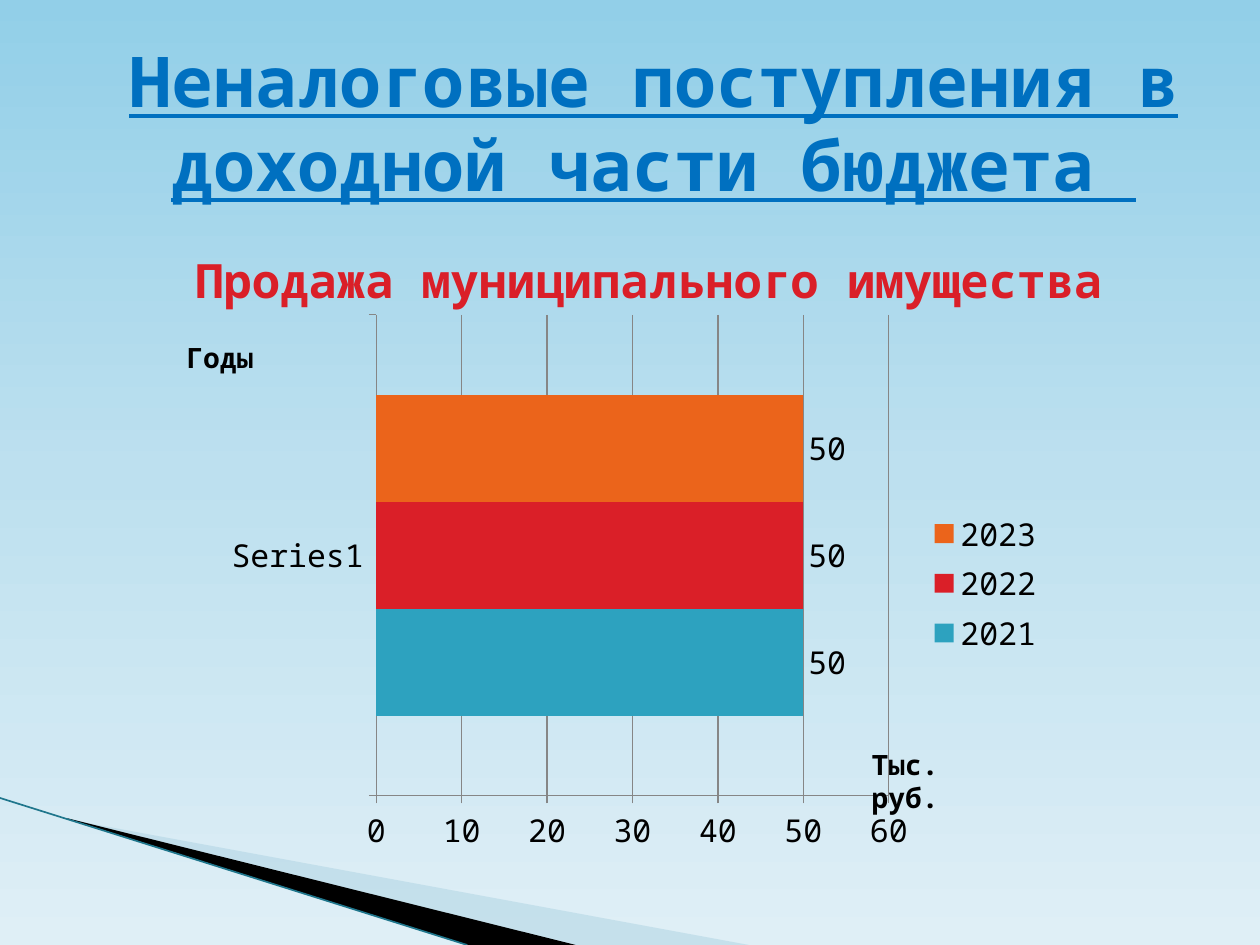
"""Build a slide on non-tax budget income with a bar chart."""
import copy

import lxml.etree
import pptx
import pptx.chart.data
import pptx.dml.color
import pptx.enum.chart
import pptx.enum.dml
import pptx.enum.text
import pptx.oxml
import pptx.oxml.ns
import pptx.util

Pt = pptx.util.Pt
qn = pptx.oxml.ns.qn
FACE = "Noto Sans Mono"
GREY = "868686"


def tint(code):
    """Return the colour for a hex string."""
    return pptx.dml.color.RGBColor.from_string(code)


def assign(item, style):
    """Set each attribute of a format dict on an item."""
    for key, value in style.items():
        setattr(item, key, value)


def style_font(font, size, code="000000", **more):
    """Give a font its face, size, colour and other traits."""
    assign(font, {"name": FACE, "size": Pt(size), **more})
    font.color.rgb = tint(code)


def place(shape, box):
    """Move and size a shape to a box in points."""
    assign(shape, dict(zip(("left", "top", "width", "height"), map(Pt, box))))


def write(shape, text, size, code, indent=0, **more):
    """Fill a shape with one centred bold paragraph."""
    frame = shape.text_frame
    assign(frame, {"word_wrap": True,
                   "auto_size": pptx.enum.text.MSO_AUTO_SIZE.NONE})
    frame.text = text
    para = frame.paragraphs[0]
    props = para._p.get_or_add_pPr()
    props.set("marL", str(Pt(indent)))
    props.set("indent", "0")
    lxml.etree.SubElement(props, qn("a:buNone"))
    assign(para, {"alignment": pptx.enum.text.PP_ALIGN.CENTER,
                  "space_before": Pt(0)})
    style_font(para.runs[0].font, size, code, bold=True, **more)


def paint_back(page, stops):
    """Fill the page with a gradient that runs down."""
    fill = page.background.fill
    fill.gradient()
    fill.gradient_angle = 270
    first = next(page.element.iter(qn("a:gs")))
    first.addnext(copy.deepcopy(first))
    for stop, (spot, code) in zip(fill.gradient_stops, stops):
        stop.color.rgb = tint(code)
        stop.position = spot


def add_wedge(page, points, code, alpha=100):
    """Draw a closed outline with a plain fill."""
    start, *rest = [(Pt(x), Pt(y)) for x, y in points]
    maker = page.shapes.build_freeform(*start, scale=1.0)
    maker.add_line_segments(rest, close=True)
    wedge = maker.convert_to_shape()
    wedge.shadow.inherit = False
    wedge.fill.solid()
    wedge.fill.fore_color.rgb = tint(code)
    wedge.line.fill.background()
    if alpha < 100:
        color = wedge.fill._xPr.find(qn("a:solidFill"))[0]
        lxml.etree.SubElement(color, qn("a:alpha")).set("val", str(alpha * 1000))


def add_corner(page, box):
    """Draw the wedges and thin line of the lower left corner."""
    left, top, width, height = box
    right, base = left + width, top + height
    add_wedge(page, [(left + 40, top + 12.5), (right, base),
                     (right - 100, base), (left + 40, top + 12)], "A0CBDC", 40)
    add_wedge(page, [(left + 38, top + 11.5), (right - 99, base),
                     (right - 160.5, base), (left + 39, top + 12)], "000000")
    line = page.shapes.add_connector(
        1, Pt(left), Pt(top), Pt(right - 161), Pt(base))
    line.line.width = Pt(0.95)
    line.line.color.rgb = tint("1F768C")
    lxml.etree.SubElement(line._element.spPr, qn("a:effectLst"))


def fill_holder(page, index, box, *words, **more):
    """Place a template holder on top and write its text."""
    holder = page.placeholders[index]
    place(holder, box)
    write(holder, *words, **more)
    page.shapes.element.append(holder.element)
    return holder


def add_label(page, box, text):
    """Add a short axis label."""
    label = page.shapes.add_textbox(*map(Pt, box))
    write(label, text, 16, "000000", indent=8.6)


def set_plot(chart, part):
    """Fix the inner plot area as parts of the chart."""
    area = chart._chartSpace.chart.plotArea
    for old in area.findall(qn("c:layout")):
        area.remove(old)
    layout = pptx.oxml.parse_xml(
        "<c:layout %s><c:manualLayout/></c:layout>" % pptx.oxml.ns.nsdecls("c"))
    tags = ("layoutTarget", "xMode", "yMode", "x", "y", "w", "h")
    for tag, value in zip(tags, ("inner", "edge", "edge", *part)):
        lxml.etree.SubElement(layout[0], qn("c:" + tag)).set("val", str(value))
    area.insert(0, layout)


def add_bars(page, box, rows):
    """Add the bar chart with one coloured series for each year."""
    kinds = pptx.enum.chart
    data = pptx.chart.data.CategoryChartData()
    data.categories = ["Series1"]
    for year, value, code in rows:
        data.add_series(year, [value])
    chart = page.shapes.add_chart(
        kinds.XL_CHART_TYPE.BAR_CLUSTERED, *map(Pt, box), data).chart
    style_font(chart.font, 18)
    assign(chart, {"has_title": False, "has_legend": True})
    assign(chart.legend, {"position": kinds.XL_LEGEND_POSITION.RIGHT,
                          "include_in_layout": False})
    plot = chart.plots[0]
    assign(plot, {"gap_width": 150, "overlap": 0, "vary_by_categories": False})
    for bar, (year, value, code) in zip(plot.series, rows):
        bar.format.fill.solid()
        bar.format.fill.fore_color.rgb = tint(code)
        assign(bar.data_labels, {
            "show_value": True,
            "position": kinds.XL_LABEL_POSITION.OUTSIDE_END})
    scale = chart.value_axis
    assign(scale, {"minimum_scale": 0, "maximum_scale": 60, "major_unit": 10,
                   "has_major_gridlines": True})
    for axis in (scale, chart.category_axis):
        axis.major_tick_mark = kinds.XL_TICK_MARK.OUTSIDE
        axis.format.line.color.rgb = tint(GREY)
    scale.major_gridlines.format.line.color.rgb = tint(GREY)
    set_plot(chart, (0.19, 0.02, 0.61, 0.86))


def main():
    """Build and save the slide."""
    deck = pptx.Presentation()
    assign(deck, {"slide_width": Pt(720), "slide_height": Pt(540)})
    page = deck.slides.add_slide(deck.slide_layouts[1])
    paint_back(page, [(0, "92CFE8"), (0.5, "BDE0EF"), (1, "DFEFF6")])
    add_corner(page, (0, 456, 428, 84))
    title = fill_holder(page, 0, (26, 0, 695, 90),
                        "Неналоговые поступления в доходной части бюджета ",
                        40, "0070C0", underline=True)
    assign(title.text_frame, {
        "margin_top": Pt(52),
        "vertical_anchor": pptx.enum.text.MSO_ANCHOR.MIDDLE})
    fill_holder(page, 1, (42.5, 139.7, 648, 356.4),
                "Продажа муниципального имущества", 27, "DA1F28", indent=8.6)
    add_bars(page, (123.8, 173.5, 480.2, 319.7),
             [("2021", 50, "2DA2BF"), ("2022", 50, "DA1F28"),
              ("2023", 50, "EB641B")])
    add_label(page, (70.6, 190.8, 101.5, 56.2), "Годы")
    add_label(page, (462.2, 423.4, 101.5, 56.2), "Тыс. руб.")
    deck.save("out.pptx")


if __name__ == "__main__":
    main()
